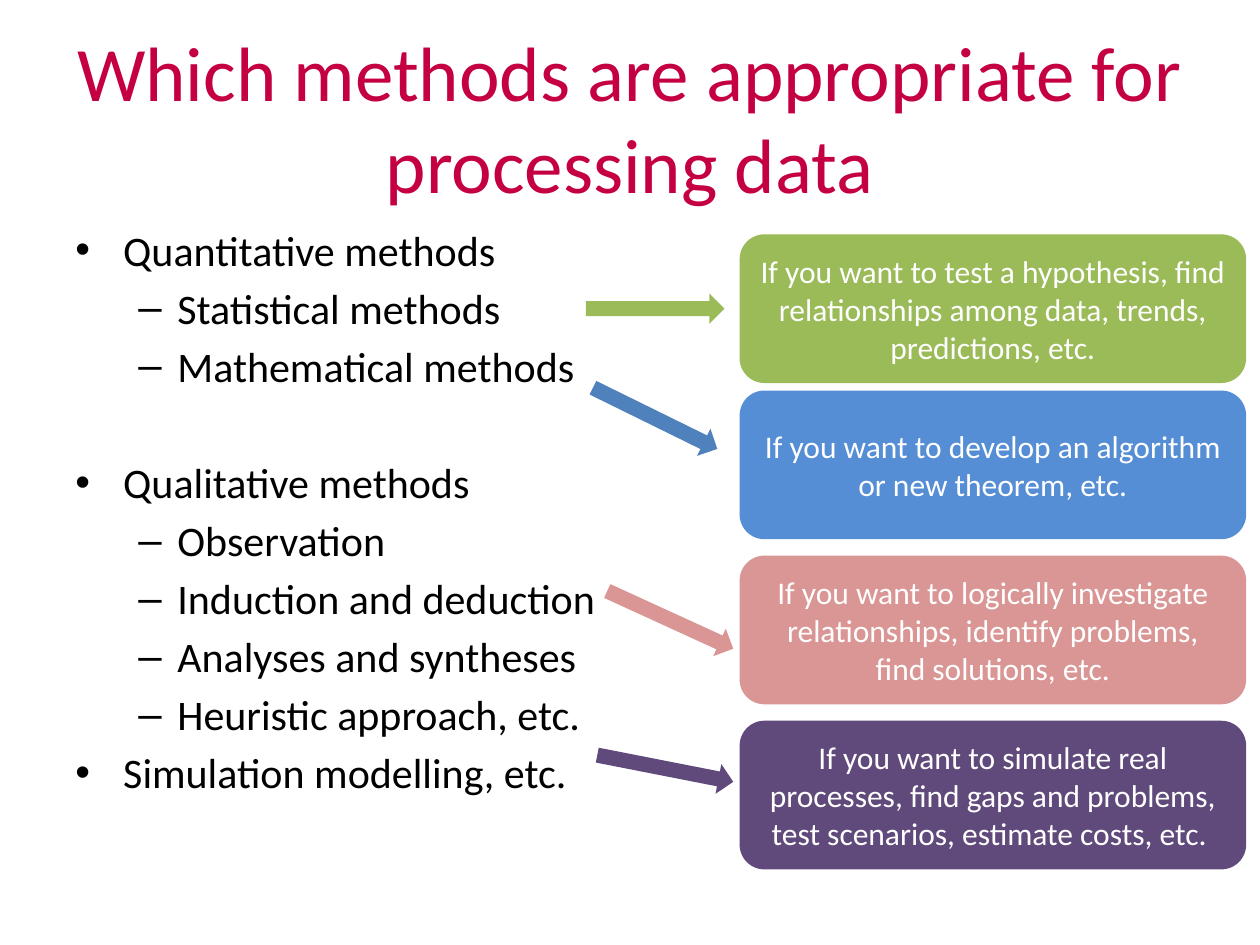
from dataclasses import dataclass

from lxml.etree import SubElement
from pptx import Presentation
from pptx.dml.color import RGBColor
from pptx.enum.shapes import MSO_SHAPE
from pptx.enum.text import MSO_ANCHOR, PP_ALIGN
from pptx.oxml.ns import qn
from pptx.util import Inches, Pt


@dataclass(frozen=True)
class Theme:
    font: str = "Calibri"
    title: str = "C40043"
    ink: str = "000000"
    white: str = "FFFFFF"
    green: str = "9BBB59"
    blue: str = "558ED5"
    steel: str = "4F81BD"
    rose: str = "D99694"
    plum: str = "604A7B"
    head: int = 44
    body: int = 24
    note: int = 18


theme = Theme()
deck = Presentation()
deck.slide_width, deck.slide_height = Inches(10), Inches(7.5)
slide = deck.slides.add_slide(deck.slide_layouts[6])


def place(left, top, width, height, kind=None, fill=None):
    """Add a text box, or a filled shape of the given kind; lengths are % of the slide."""
    wide, high = deck.slide_width / 100, deck.slide_height / 100
    box = [int(n) for n in (left * wide, top * high, width * wide, height * high)]
    if kind is None:
        item = slide.shapes.add_textbox(*box)
    else:
        item = slide.shapes.add_shape(kind, *box)
        item.shadow.inherit = False
        item.fill.solid()
        item.fill.fore_color.rgb = RGBColor.from_string(fill)
        item.line.fill.background()
    item.text_frame.word_wrap = True
    return item


def write(item, text, size, color, align=PP_ALIGN.CENTER,
          anchor=MSO_ANCHOR.MIDDLE, level=0, bullet=None, indent=(0, 0), before=0):
    """Write one paragraph; indent is the text margin and bullet offset in inches."""
    frame = item.text_frame
    frame.vertical_anchor = anchor
    para = frame.add_paragraph() if frame.text else frame.paragraphs[0]
    para.alignment, para.level = align, level
    if before:
        para.space_before = Pt(before)
    if bullet:
        props = para._p.get_or_add_pPr()
        props.set("marL", str(Inches(indent[0])))
        props.set("indent", str(Inches(indent[1])))
        SubElement(props, qn("a:buFont"), typeface="Arial")
        SubElement(props, qn("a:buChar"), char=bullet)
    run = para.add_run()
    run.text = text
    run.font.name, run.font.size = theme.font, Pt(size)
    run.font.color.rgb = RGBColor.from_string(color)


title = place(5, 4, 90, 16.67)
write(title, "Which methods are appropriate for processing data",
      size=theme.head, color=theme.title)

# Bullet list: level, text, space before in points
gap, line = 4.3, 33.6
methods = [
    (0, "Quantitative methods", 0),
    (1, "Statistical methods", gap),
    (1, "Mathematical methods", gap),
    (0, "Qualitative methods", gap + line),
    (1, "Observation", gap),
    (1, "Induction and deduction", gap),
    (1, "Analyses and syntheses", gap),
    (1, "Heuristic approach, etc.", gap),
    (0, "Simulation modelling, etc.", gap),
]
marks = [("•", (0.38, -0.38)), ("–", (0.81, -0.31))]
body = place(5, 23.07, 90, 66)
for level, text, before in methods:
    bullet, indent = marks[level]
    write(body, text, size=theme.body, color=theme.ink, align=PP_ALIGN.LEFT,
          anchor=MSO_ANCHOR.TOP, level=level, bullet=bullet, indent=indent,
          before=before)

# Advice boxes: top, fill, text
advice = [
    (24.8, theme.green, "If you want to test a hypothesis, find relationships "
                        "among data, trends, predictions, etc."),
    (41.33, theme.blue, "If you want to develop an algorithm or new theorem, etc."),
    (58.8, theme.rose, "If you want to logically investigate relationships, "
                       "identify problems, find solutions, etc."),
    (76.27, theme.plum, "If you want to simulate real processes, find gaps and "
                        "problems, test scenarios, estimate costs, etc. "),
]
for top, fill, text in advice:
    card = place(58.7, top, 40.2, 15.73, MSO_SHAPE.ROUNDED_RECTANGLE, fill)
    write(card, text, size=theme.note, color=theme.white)

# Arrows: left, top, turn in degrees, fill
arrows = [
    (46.5, 31.07, 0, theme.green),
    (46.5, 42.67, 26.2, theme.steel),
    (47.3, 79.73, 11.1, theme.plum),
    (47.7, 64, 24.6, theme.rose),
]
for left, top, turn, fill in arrows:
    arrow = place(left, top, 11, 3.2, MSO_SHAPE.RIGHT_ARROW, fill)
    arrow.rotation = turn

deck.save("out.pptx")
